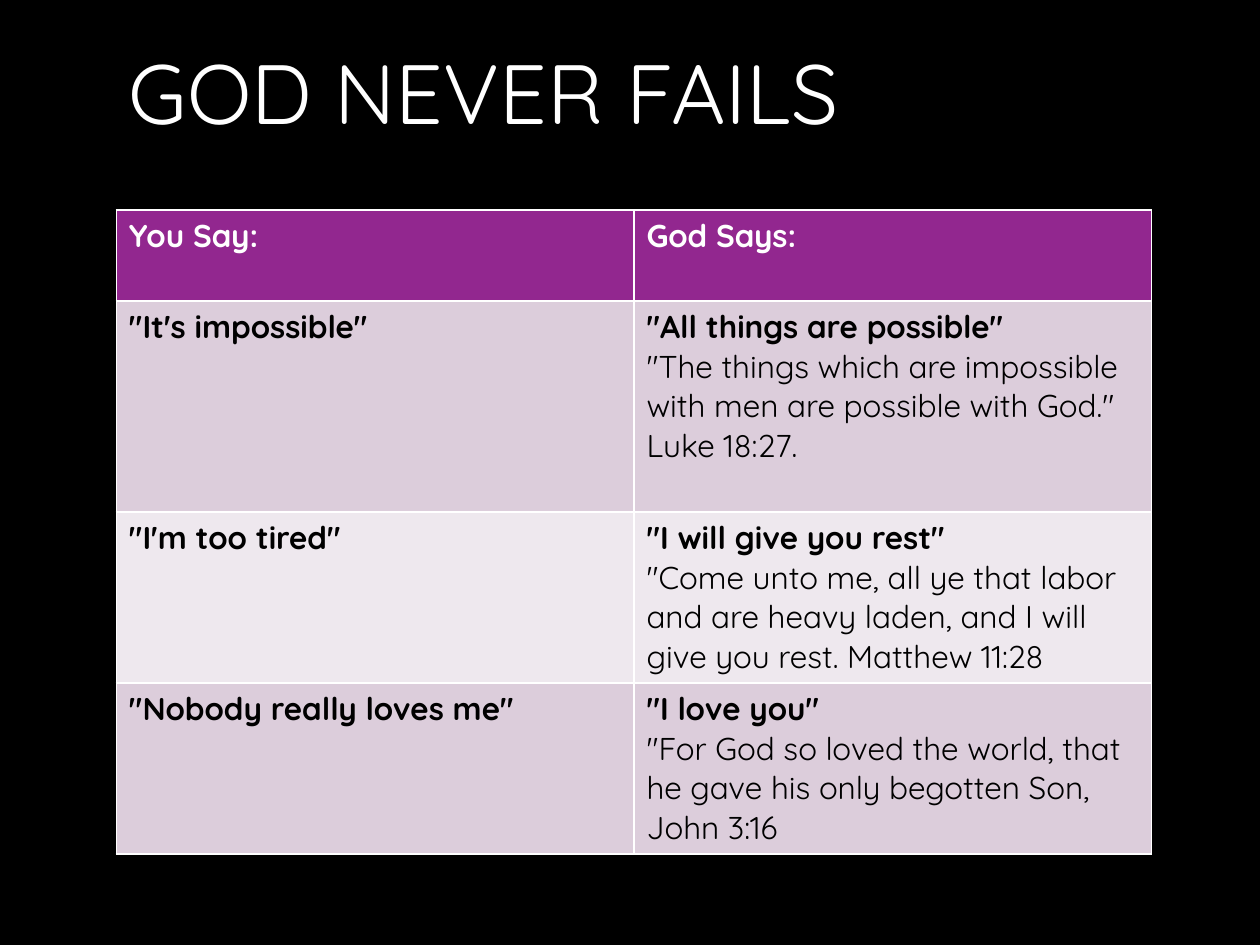
from pptx import Presentation
from pptx.dml.color import RGBColor
from pptx.enum import text
from pptx.util import Pt

FONT = "Quicksand"
HEADINGS = ["You Say:", "God Says:"]
SAYINGS = [
    ('"It\'s impossible"', '"All things are possible"',
     '"The things which are impossible with men are possible with God." Luke 18:27.'),
    ('"I\'m too tired"', '"I will give you rest"',
     '"Come unto me, all ye that labor and are heavy laden, and I will give you rest. Matthew 11:28'),
    ('"Nobody really loves me"', '"I love you"',
     '"For God so loved the world, that he gave his only begotten Son, John 3:16'),
]
ROW_HEIGHTS = [52, 120.6, 97.7, 97.7]
BANDS = ["DCCDDB", "EEE8EE"]


def paint(target, color):
    target.solid()
    target.fore_color.rgb = RGBColor.from_string(color)


def add_words(paragraph, words, size, color, bold):
    run = paragraph.add_run()
    run.text = words
    run.font.name = FONT
    run.font.size = Pt(size)
    run.font.bold = bold
    paint(run.font.fill, color)


def add_title(slide, left, top, width, height):
    frame = slide.shapes.add_textbox(Pt(left), Pt(top), Pt(width), Pt(height)).text_frame
    frame.word_wrap = True
    frame.vertical_anchor = text.MSO_ANCHOR.MIDDLE
    add_words(frame.paragraphs[0], "GOD NEVER FAILS", 48, "FFFFFF", False)


def fill_cell(cell, fill, color, heading, verse=None):
    paint(cell.fill, fill)
    frame = cell.text_frame
    add_words(frame.paragraphs[0], heading, 18, color, True)
    if verse:
        add_words(frame.add_paragraph(), verse, 18, color, False)


def add_promises(slide, left, top, width):
    promises = slide.shapes.add_table(
        len(ROW_HEIGHTS), len(HEADINGS), Pt(left), Pt(top), Pt(width), Pt(sum(ROW_HEIGHTS))).table
    for row, height in zip(promises.rows, ROW_HEIGHTS):
        row.height = Pt(height)
    for column, heading in enumerate(HEADINGS):
        fill_cell(promises.cell(0, column), "92278F", "FFFFFF", heading)
    for index, (complaint, promise, verse) in enumerate(SAYINGS):
        band = BANDS[index % 2]
        fill_cell(promises.cell(index + 1, 0), band, "000000", complaint)
        fill_cell(promises.cell(index + 1, 1), band, "000000", promise, verse)


def main():
    deck = Presentation()
    deck.slide_width, deck.slide_height = Pt(720), Pt(540)
    slide = deck.slides.add_slide(deck.slide_layouts[6])
    paint(slide.background.fill, "000000")
    add_title(slide, 66.5, 0, 591, 104)
    add_promises(slide, 66.5, 120, 591.5)
    deck.save("out.pptx")


if __name__ == "__main__":
    main()
